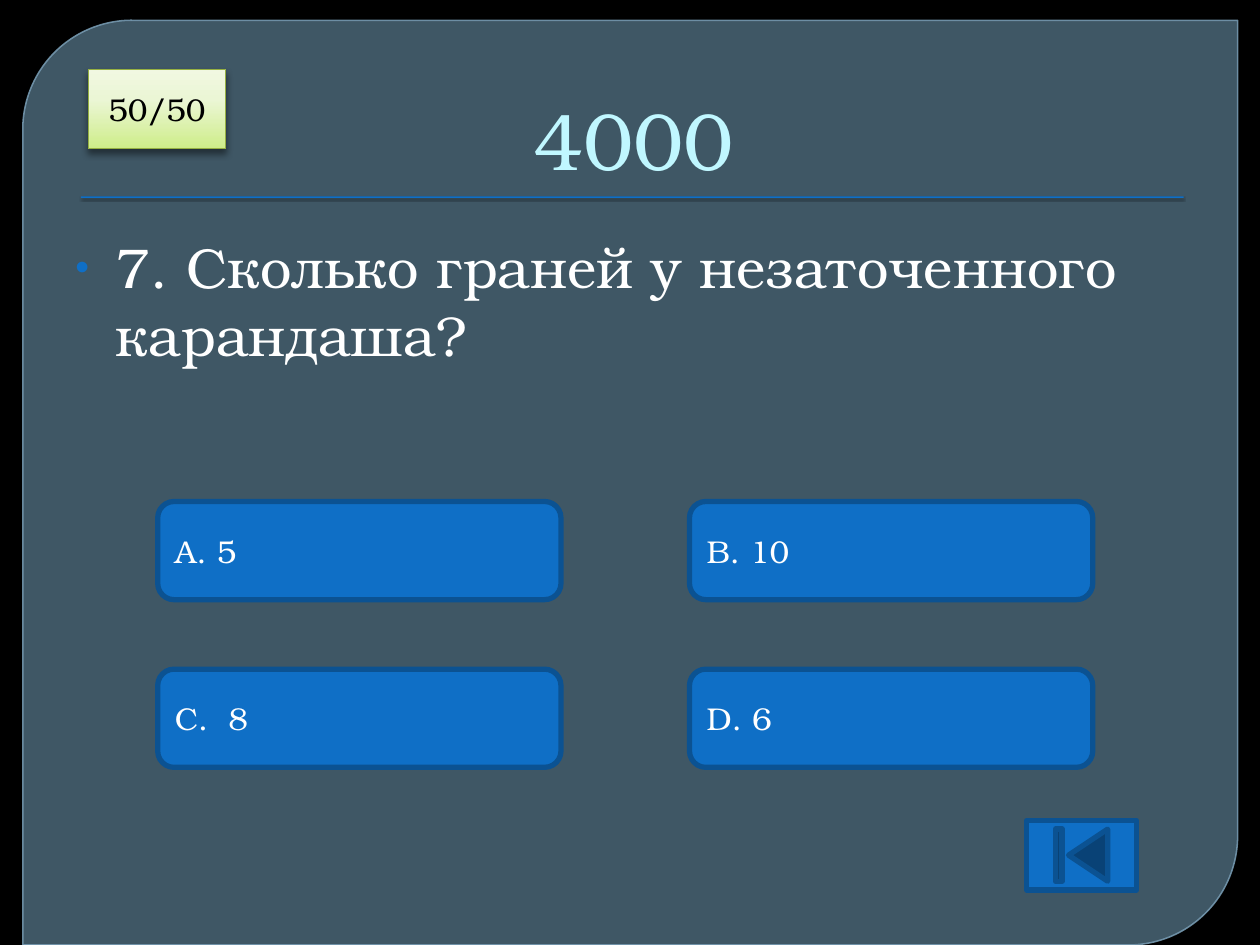
"""Build a quiz slide with a question and four answer buttons."""
from copy import deepcopy

from lxml import etree
from pptx import Presentation
from pptx import util as u
from pptx.dml.color import RGBColor
from pptx.enum import shapes, text
from pptx.oxml.ns import qn

FONT = "TeX Gyre Bonum"
BLACK = RGBColor(0x00, 0x00, 0x00)
WHITE = RGBColor(0xFF, 0xFF, 0xFF)
TITLE = RGBColor(0xC0, 0xF7, 0xFF)
PANEL = RGBColor(0x61, 0x86, 0x9C)
PANEL_EDGE = RGBColor(0x77, 0x9B, 0xB2)
BLUE = RGBColor(0x0F, 0x6F, 0xC6)
BLUE_EDGE = RGBColor(0x0B, 0x52, 0x92)
GREEN_EDGE = RGBColor(0x96, 0xB0, 0x42)
GREENS = [
    (0, RGBColor(0xCE, 0xED, 0x89)),
    (0.62, RGBColor(0xEB, 0xF6, 0xD5)),
    (1, RGBColor(0xF1, 0xF8, 0xE1)),
]
KIND = shapes.MSO_SHAPE
ALIGN = text.PP_ALIGN
ANCHOR = text.MSO_ANCHOR


def sub(parent, tag, **attrs):
    """Append a DrawingML child element and return it."""
    el = etree.SubElement(parent, qn(tag))
    for name, value in attrs.items():
        el.set(name, str(value))
    return el


def set_alpha(parent, percent):
    """Make the solid colour inside parent translucent."""
    color = next(parent.iter(qn("a:srgbClr")))
    sub(color, "a:alpha", val=percent * 1000)


def add_shadow(sp, alpha, blur, dist):
    """Give a shape a black shadow that falls straight down."""
    effects = sp._element.spPr.find(qn("a:effectLst"))
    shadow = sub(effects, "a:outerShdw", blurRad=u.Pt(blur), dist=u.Pt(dist),
                 dir=5400000, algn="ctr", rotWithShape=0)
    color = sub(shadow, "a:srgbClr", val=BLACK)
    sub(color, "a:alpha", val=alpha * 1000)


def fill_gradient(sp, stops):
    """Fill a shape with a gradient that runs from bottom to top."""
    sp.fill.gradient()
    sp.fill.gradient_angle = 90
    gs_list = next(sp._element.spPr.iter(qn("a:gsLst")))
    while len(gs_list) < len(stops):
        gs_list.append(deepcopy(gs_list[0]))
    for stop, (position, color) in zip(sp.fill.gradient_stops, stops):
        stop.position = position
        stop.color.rgb = color


def add_bullet(p, indent, color, size):
    """Give a paragraph a hanging coloured bullet."""
    pPr = p._p.get_or_add_pPr()
    pPr.set("marL", str(indent))
    pPr.set("indent", str(-indent))
    sub(sub(pPr, "a:buClr"), "a:srgbClr", val=color)
    sub(pPr, "a:buSzPct", val=size * 1000)
    sub(pPr, "a:buFont", typeface="Arial")
    sub(pPr, "a:buChar", char="•")


def write(sp, words, size=18, color=WHITE, align=ALIGN.LEFT, anchor=ANCHOR.MIDDLE):
    """Put formatted text in a shape and return its paragraph."""
    tf = sp.text_frame
    tf.word_wrap = True
    tf.auto_size = text.MSO_AUTO_SIZE.NONE
    tf.vertical_anchor = anchor
    p = tf.paragraphs[0]
    p.alignment = align
    r = p.add_run()
    r.text = words
    r.font.name = FONT
    r.font.size = u.Pt(size)
    r.font.color.rgb = color
    return p


def add_box(s, kind, left, top, width, height, fill=BLUE, edge=BLUE_EDGE, weight=3):
    """Add a preset shape, sized in centimetres."""
    sp = s.shapes.add_shape(kind, u.Cm(left), u.Cm(top), u.Cm(width), u.Cm(height))
    sp.shadow.inherit = False
    sp.fill.solid()
    sp.fill.fore_color.rgb = fill
    if edge is None:
        sp.line.fill.background()
    else:
        sp.line.color.rgb = edge
        sp.line.width = u.Pt(weight)
    return sp


def add_backdrop(s):
    """Add the black ground, the translucent panel and the title rule."""
    s.background.fill.solid()
    s.background.fill.fore_color.rgb = BLACK
    panel = add_box(s, KIND.ROUND_2_DIAG_RECTANGLE, 0.46, 0.41, 24.49, 18.64,
                    PANEL, PANEL_EDGE, 0.87)
    panel.adjustments[0] = 0.118
    panel.adjustments[1] = 0
    spPr = panel._element.spPr
    set_alpha(spPr.find(qn("a:solidFill")), 65)
    set_alpha(spPr.find(qn("a:ln")), 88)
    rule = add_box(s, KIND.RECTANGLE, 1.63, 3.96, 22.23, 0.03, edge=None)
    add_shadow(rule, 75, 1, 1)


def add_title(s, words):
    """Place the title above the panel and format it."""
    title = s.shapes.title
    s.shapes._spTree.append(title._element)
    title.left, title.top = u.Cm(1.27), u.Cm(0.71)
    title.width, title.height = u.Cm(22.86), u.Cm(3.18)
    p = write(title, words, size=46, color=TITLE, align=ALIGN.CENTER,
              anchor=ANCHOR.BOTTOM)
    p._p.get_or_add_pPr().set("marL", str(u.Cm(0.15)))


def add_question(s, words):
    """Add the bulleted question."""
    box = s.shapes.add_textbox(u.Cm(1.27), u.Cm(4.57), u.Cm(22.86), u.Cm(12.57))
    p = write(box, words, size=32, anchor=ANCHOR.TOP)
    add_bullet(p, u.Cm(0.81), BLUE, 70)


def add_answers(s, answers):
    """Lay the answers out in two columns."""
    for i, words in enumerate(answers):
        row, col = divmod(i, 2)
        button = add_box(s, KIND.ROUNDED_RECTANGLE, 3.18 + col * 10.72,
                         10.11 + row * 3.38, 8.13, 1.98)
        write(button, words)


def add_hint_button(s, words):
    """Add the green hint button."""
    button = add_box(s, KIND.ACTION_BUTTON_CUSTOM, 1.78, 1.4, 2.77, 1.6,
                     edge=GREEN_EDGE, weight=0.75)
    fill_gradient(button, GREENS)
    add_shadow(button, 43, 4, 3)
    write(button, words, color=BLACK, align=ALIGN.CENTER)


def main():
    """Build and save the slide."""
    prs = Presentation()
    prs.slide_width, prs.slide_height = u.Cm(25.4), u.Cm(19.05)
    s = prs.slides.add_slide(prs.slide_layouts[5])
    add_backdrop(s)
    add_title(s, "4000")
    add_question(s, "7. Сколько граней у незаточенного карандаша?")
    add_answers(s, ["A. 5", "B. 10", "C.  8", "D. 6"])
    add_hint_button(s, "50/50")
    add_box(s, KIND.ACTION_BUTTON_BEGINNING, 20.7, 16.54, 2.21, 1.4)
    prs.save("out.pptx")


if __name__ == "__main__":
    main()
